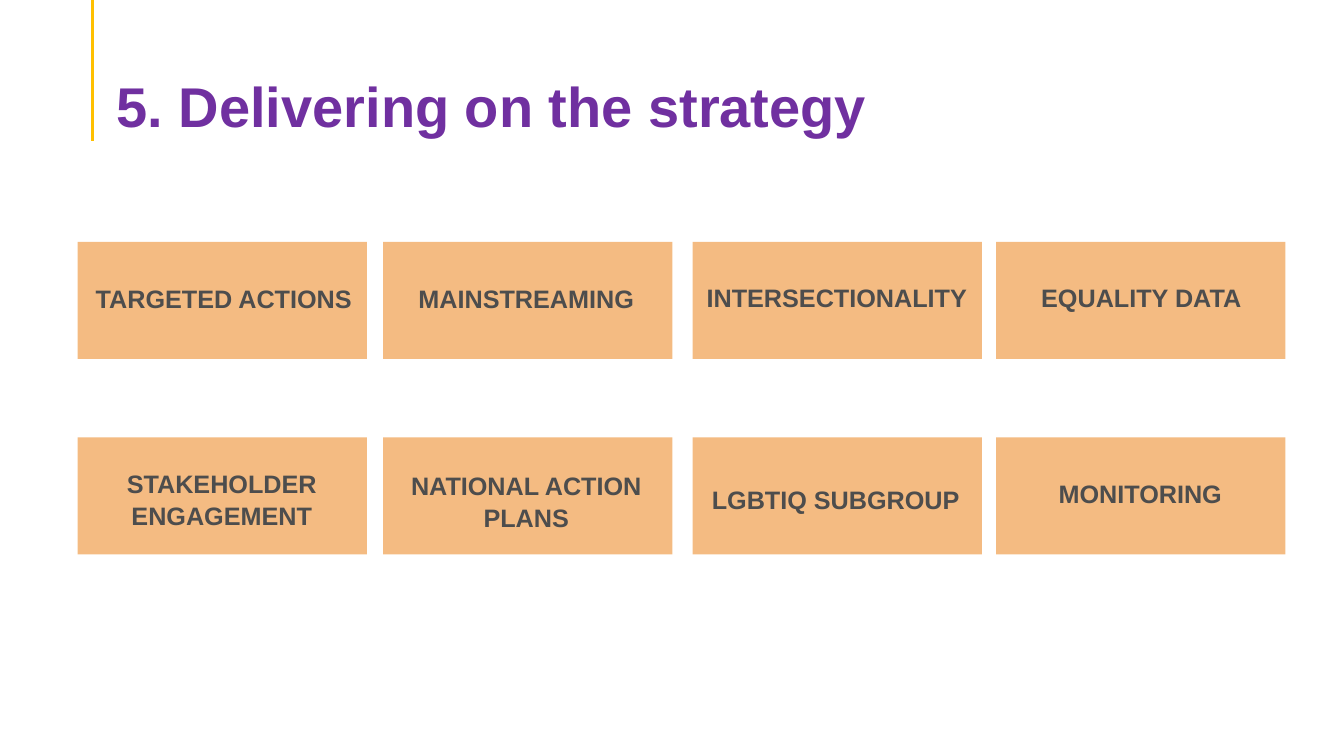
from lxml import etree
from pptx import Presentation
from pptx.dml.color import RGBColor
from pptx.enum.shapes import MSO_CONNECTOR, MSO_SHAPE
from pptx.enum.text import MSO_ANCHOR, PP_ALIGN
from pptx.oxml.ns import qn
from pptx.util import Inches, Pt

TOP, MIDDLE, BOTTOM = MSO_ANCHOR.TOP, MSO_ANCHOR.MIDDLE, MSO_ANCHOR.BOTTOM
LEFT, CENTER = PP_ALIGN.LEFT, PP_ALIGN.CENTER

PURPLE, GOLD, ORANGE, GREY = "7030A0", "FFC000", "F4BB82", "4D4D4D"
TITLE = "5. Delivering on the strategy"

# Each label: text, left, top, width, height, anchor
LABEL_ROWS = [
    [
        ("TARGETED ACTIONS", 0.84, 2.7, 2.76, 1.79, TOP),
        ("MAINSTREAMING", 3.84, 2.7, 2.76, 1.79, TOP),
        ("INTERSECTIONALITY", 6.89, 2.69, 2.82, 1.79, TOP),
        ("EQUALITY DATA", 9.94, 2.69, 2.76, 1.79, TOP),
    ],
    [
        ("STAKEHOLDER ENGAGEMENT", 0.82, 4.53, 2.76, 1.79, TOP),
        ("NATIONAL ACTION PLANS", 3.84, 4.55, 2.76, 1.79, TOP),
        ("LGBTIQ SUBGROUP", 6.91, 4.34, 2.76, 1.16, MIDDLE),
        ("MONITORING", 9.93, 4.63, 2.76, 1.79, TOP),
    ],
]
CARD_LEFTS = [0.77, 3.8, 6.87, 9.88]
CARD_TOPS = [2.4, 4.34]
CARD_W, CARD_H = 2.87, 1.16


def rgb(value):
    return RGBColor.from_string(value)


def add_card(slide, left, top):
    card = slide.shapes.add_shape(
        MSO_SHAPE.RECTANGLE, Inches(left), Inches(top), Inches(CARD_W), Inches(CARD_H))
    card.shadow.inherit = False
    card.fill.solid()
    card.fill.fore_color.rgb = rgb(ORANGE)
    card.line.fill.background()


def add_text(slide, text, box, anchor, align, size, color, spacing, insets):
    """Add one bold paragraph; insets are the top and bottom margins."""
    frame = slide.shapes.add_textbox(*map(Inches, box)).text_frame
    frame.word_wrap = True
    frame.vertical_anchor = anchor
    frame.margin_left = frame.margin_right = Inches(0.1)
    frame.margin_top, frame.margin_bottom = map(Inches, insets)
    paragraph = frame.paragraphs[0]
    paragraph.text = text
    paragraph.alignment = align
    paragraph.line_spacing = spacing
    font = paragraph.font
    font.name, font.size, font.bold = "Arial", Pt(size), True
    font.color.rgb = rgb(color)


def add_accent_line(slide):
    accent = slide.shapes.add_connector(
        MSO_CONNECTOR.STRAIGHT, Inches(0.92), 0, Inches(0.92), Inches(1.4))
    accent.line.color.rgb = rgb(GOLD)
    accent.line.width = Pt(2.25)
    etree.SubElement(accent._element.spPr, qn("a:effectLst"))


def main():
    deck = Presentation()
    deck.slide_width, deck.slide_height = Inches(13.33), Inches(7.5)
    slide = deck.slides.add_slide(deck.slide_layouts[6])

    add_accent_line(slide)
    add_text(slide, TITLE, (1.06, 0.53, 11.5, 0.86), BOTTOM, LEFT, 40, PURPLE,
             0.9, (0.05, 0))
    for top, labels in zip(CARD_TOPS, LABEL_ROWS):
        for left, (text, *box, anchor) in zip(CARD_LEFTS, labels):
            add_card(slide, left, top)
            add_text(slide, text, box, anchor, CENTER, 18, GREY, 1.05, (0.1, 0.05))

    deck.save("out.pptx")


if __name__ == "__main__":
    main()
